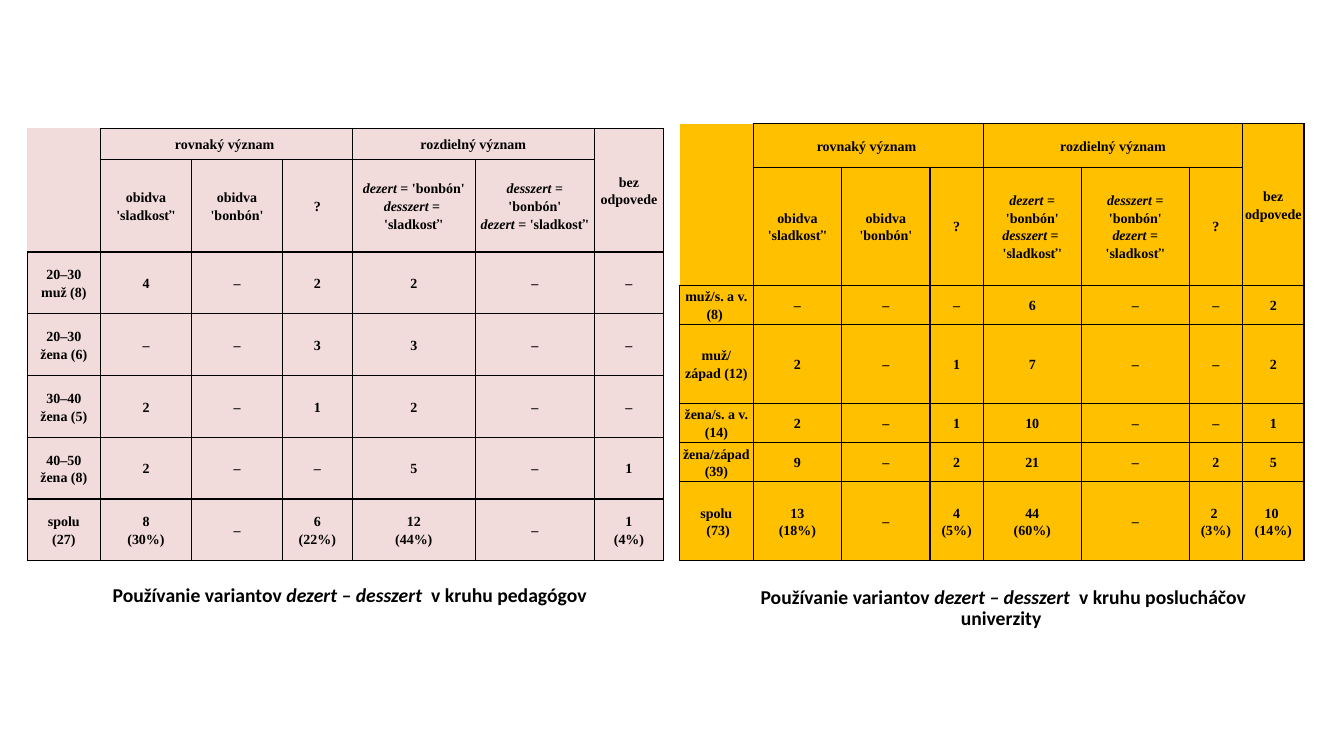
from lxml import etree
from pptx import Presentation
from pptx.dml.color import RGBColor
from pptx.enum.text import MSO_ANCHOR, MSO_AUTO_SIZE, PP_ALIGN
from pptx.oxml.ns import qn
from pptx.util import Pt

MIDDLE, BOTTOM = MSO_ANCHOR.MIDDLE, MSO_ANCHOR.BOTTOM
CENTER = PP_ALIGN.CENTER
FIXED = MSO_AUTO_SIZE.NONE

BLACK, PINK, GOLD = "000000", "F2DBDB", "FFC000"
SIDES = "LRTB"
COMPARE = 4  # layout with two captions

CELL_FONT = {"name": "Times New Roman", "size": Pt(10), "bold": True}
CELL_PARA = {"alignment": CENTER, "line_spacing": 1.15, "space_before": Pt(0)}
CAP_FONT = {"name": "Calibri", "size": Pt(14), "bold": True}
CAP_PARA = {"alignment": CENTER, "line_spacing": 0.9, "space_before": Pt(10)}
CAP_FRAME = {"vertical_anchor": BOTTOM, "word_wrap": True, "auto_size": FIXED}

# "|" parts paragraphs, "*" wraps italics, ";" parts cells
STAFF = [
    ";rovnaký význam ;;;rozdielný význam;;bez odpovede",
    ";obidva 'sladkosť';obidva 'bonbón';?;"
    "*dezert* = 'bonbón'|*desszert* = |'sladkosť';"
    "*desszert* = 'bonbón'|*dezert *= 'sladkosť';",
    "20–30 muž (8);4;–;2;2;–;–",
    "20–30 žena (6);–;–;3;3;–;–",
    "30–40 žena (5);2;–;1;2;–;–",
    "40–50 žena (8);2;–;–;5;–;1",
    "spolu|(27);8|(30%);–;6|(22%);12|(44%);–;1|(4%)",
]
PUPILS = [
    ";rovnaký význam ;;;rozdielný význam;;;bez odpovede",
    ";obidva 'sladkosť';obidva 'bonbón';?;"
    "*dezert* = 'bonbón'|*desszert* = |'sladkosť';"
    "*desszert* = 'bonbón'|*dezert *= 'sladkosť';?;",
    "muž/s. a v. (8) ;–;–;–;6;–;–;2",
    "muž/|západ (12);2;–;1;7;–;–;2",
    "žena/s. a v. (14);2;–;1;10;–;–;1",
    "žena/západ (39);9;–;2;21;–;2;5",
    "spolu| (73);13|(18%);–;4|(5%);44|(60%);–;2 |(3%);10 |(14%)",
]


def color(code):
    return RGBColor.from_string(code)


def style(item, values):
    for name, value in values.items():
        setattr(item, name, value)


class Sheet:
    def __init__(self, slide):
        self.slide = slide

    def words(self, frame, text, para, font):
        """Fill a frame from text marked with | and *."""
        for i, line in enumerate(text.split("|")):
            p = frame.add_paragraph() if i else frame.paragraphs[0]
            style(p, para)
            for j, part in enumerate(line.split("*")):
                if part:
                    run = p.add_run()
                    run.text = part
                    style(run.font, {**font, "italic": j % 2 == 1})
                    run.font.color.rgb = color(BLACK)
            if not line:
                size = str(int(font["size"].pt * 100))
                etree.SubElement(p._p, qn("a:endParaRPr"), sz=size)

    def caption(self, idx, box, text):
        holder = self.slide.placeholders[idx]
        names = ("left", "top", "width", "height")
        style(holder, dict(zip(names, map(Pt, box))))
        style(holder.text_frame, CAP_FRAME)
        self.words(holder.text_frame, text, CAP_PARA, CAP_FONT)

    def border(self, cell, sides):
        """Draw the given sides and blank the others."""
        props = cell._tc.get_or_add_tcPr()
        for side in SIDES:
            line = etree.SubElement(props, qn("a:ln" + side), w=str(Pt(1)))
            if side in sides:
                fill = etree.SubElement(line, qn("a:solidFill"))
                etree.SubElement(fill, qn("a:srgbClr"), val=BLACK)
            else:
                etree.SubElement(line, qn("a:noFill"))

    def table(self, spot, cols, rows, data, spans, fill, inset):
        left, top = spot
        frame = self.slide.shapes.add_table(
            len(rows), len(cols), Pt(left), Pt(top), Pt(sum(cols)), Pt(sum(rows)))
        grid = frame.table
        style(grid, {"first_row": False, "horz_banding": False})
        for col, width in zip(grid.columns, cols):
            col.width = Pt(width)
        for row, height in zip(grid.rows, rows):
            row.height = Pt(height)
        for start, end in spans:
            grid.cell(*start).merge(grid.cell(*end))
        look = {"margin_left": Pt(inset), "margin_right": Pt(inset),
                "margin_top": 0, "margin_bottom": 0, "vertical_anchor": MIDDLE}
        corner = {(0, 0): "R", (1, 0): "RB"}
        for r, line in enumerate(data):
            for c, text in enumerate(line.split(";")):
                cell = grid.cell(r, c)
                style(cell, look)
                self.border(cell, corner.get((r, c), SIDES))
                cell.fill.solid()
                cell.fill.fore_color.rgb = color(fill)
                self.words(cell.text_frame, text, CELL_PARA, CELL_FONT)

    def clear(self):
        """Remove the placeholders left empty."""
        for holder in list(self.slide.placeholders):
            if not holder.text_frame.text:
                holder.element.getparent().remove(holder.element)


def main():
    deck = Presentation()
    style(deck, {"slide_width": Pt(960), "slide_height": Pt(540)})
    sheet = Sheet(deck.slides.add_slide(deck.slide_layouts[COMPARE]))
    lead = "Používanie variantov* dezert – desszert * v kruhu "
    sheet.caption(1, (46.8, 412.6, 406, 24.5), lead + "pedagógov")
    sheet.caption(3, (512.6, 415.4, 408.2, 38.2), lead + "poslucháčov univerzity ")
    sheet.clear()
    sheet.table((19.4, 91.6), [52.4, 65, 65, 49.8, 88, 85, 49.5],
                [22.3, 66.2] + [44.1] * 5, STAFF,
                [((0, 1), (0, 3)), ((0, 4), (0, 5)), ((0, 6), (1, 6))], PINK, 3.6)
    sheet.table((485.4, 88.4), [52.6, 63.2, 63.2, 38, 70, 77.2, 38, 44],
                [31, 84.3, 28.1, 56.2, 28.1, 28.1, 56.2], PUPILS,
                [((0, 1), (0, 3)), ((0, 4), (0, 6)), ((0, 7), (1, 7))], GOLD, 0.7)
    deck.save("out.pptx")


if __name__ == "__main__":
    main()
